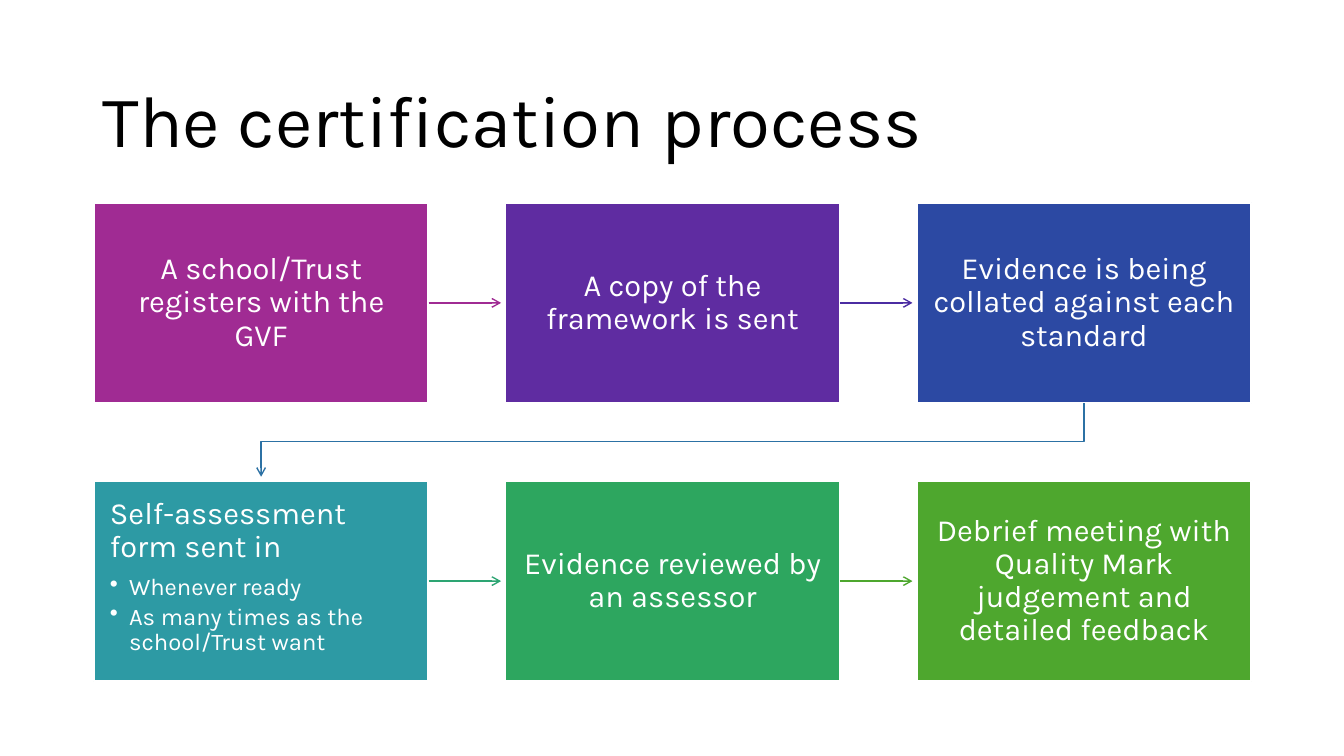
from dataclasses import dataclass

from lxml import etree
from pptx import Presentation, util as u
from pptx.dml.color import RGBColor
from pptx.enum import shapes, text
from pptx.oxml.ns import qn

PX = 9144  # EMU per px, 100 px to the inch


@dataclass(frozen=True)
class Theme:
    font: str = "Karla"
    ink: str = "000000"
    paper: str = "FFFFFF"
    boxes: tuple = ("A02B93", "5F2CA1", "2C49A3", "2D9AA4", "2DA65F", "4EA72E")
    arrows: tuple = ("A02B93", "4B2CA2", "2C71A4", "2DA573", "4EA72E")
    title_size: int = 52
    step_size: int = 22
    detail_size: int = 17
    border: float = 1.5
    arrow: int = 1


class ProcessSlide:
    def __init__(self, presentation, theme):
        self.theme = theme
        self.slide = presentation.slides.add_slide(presentation.slide_layouts[6])
        self.shapes = self.slide.shapes

    def fill_paragraph(self, paragraph, words, size, color, after=0.0):
        paragraph.text = words
        paragraph.line_spacing = 0.9
        paragraph.space_after = u.Pt(round(size * after, 1))
        paragraph.font.name = self.theme.font
        paragraph.font.size = u.Pt(size)
        paragraph.font.color.rgb = RGBColor.from_string(color)

    def title(self, words, left, top, width, height):
        box = self.shapes.add_textbox(left * PX, top * PX, width * PX, height * PX)
        frame = box.text_frame
        frame.word_wrap = True
        frame.vertical_anchor = text.MSO_ANCHOR.MIDDLE
        self.fill_paragraph(frame.paragraphs[0], words, self.theme.title_size, self.theme.ink)

    def step(self, words, details, color, left, top, width, height):
        shape = self.shapes.add_shape(shapes.MSO_SHAPE.RECTANGLE,
                                      left * PX, top * PX, width * PX, height * PX)
        shape.shadow.inherit = False
        shape.fill.solid()
        shape.fill.fore_color.rgb = RGBColor.from_string(color)
        shape.line.color.rgb = RGBColor.from_string(self.theme.paper)
        shape.line.width = u.Pt(self.theme.border)
        frame = shape.text_frame
        frame.word_wrap = True
        frame.margin_left = frame.margin_right = 16 * PX
        frame.margin_top = frame.margin_bottom = 17 * PX
        frame.vertical_anchor = text.MSO_ANCHOR.TOP if details else text.MSO_ANCHOR.MIDDLE
        heading = frame.paragraphs[0]
        heading.alignment = text.PP_ALIGN.LEFT if details else text.PP_ALIGN.CENTER
        self.fill_paragraph(heading, words, self.theme.step_size, self.theme.paper, 0.35)
        for detail in details:
            self.bullet(frame.add_paragraph(), detail)
        return shape

    def bullet(self, paragraph, words):
        self.fill_paragraph(paragraph, words, self.theme.detail_size, self.theme.paper, 0.15)
        paragraph.alignment = text.PP_ALIGN.LEFT
        paragraph.level = 1
        properties = paragraph._p.get_or_add_pPr()
        properties.set("marL", str(19 * PX))
        properties.set("indent", str(-19 * PX))
        etree.SubElement(properties, qn("a:buChar"), char="•")
        # The bullet must come before the default run properties
        properties.append(properties.find(qn("a:defRPr")))

    def arrow_line(self, shape, color):
        shape.line.color.rgb = RGBColor.from_string(color)
        shape.line.width = u.Pt(self.theme.arrow)
        line = shape.line._get_or_add_ln()
        etree.SubElement(line, qn("a:tailEnd"), type="arrow")

    def arrow(self, source, color, end_x, y):
        connector = self.shapes.add_connector(shapes.MSO_CONNECTOR.STRAIGHT,
                                              source.left + source.width, y * PX,
                                              end_x * PX, y * PX)
        connector.begin_connect(source, 3)
        connector.end_y = connector.begin_y
        self.arrow_line(connector, color)
        etree.SubElement(connector._element.spPr, qn("a:effectLst"))

    def bent_arrow(self, color, points):
        start, *rest = [(x * PX, y * PX) for x, y in points]
        builder = self.shapes.build_freeform(*start)
        builder.add_line_segments(rest, close=False)
        shape = builder.convert_to_shape()
        shape.shadow.inherit = False
        shape.fill.background()
        self.arrow_line(shape, color)


STEPS = (
    ("A school/Trust registers with the GVF", ()),
    ("A copy of the framework is sent", ()),
    ("Evidence is being collated against each standard", ()),
    ("Self-assessment form sent in",
     ("Whenever ready", "As many times as the school/Trust want")),
    ("Evidence reviewed by an assessor", ()),
    ("Debrief meeting with Quality Mark judgement and detailed feedback", ()),
)
COLUMNS = 3
LEFT, TOP, WIDTH, HEIGHT = 93, 201, 332, 199
PITCH_X, PITCH_Y = 408, 276
ARROW_GAP = 4


def main():
    presentation = Presentation()
    presentation.slide_width, presentation.slide_height = 1333 * PX, 750 * PX
    theme = Theme()
    process = ProcessSlide(presentation, theme)

    # Title
    process.title("The certification process", 92, 61, 1150, 124)

    # Steps in two rows
    boxes = []
    for index, (words, details) in enumerate(STEPS):
        row, column = divmod(index, COLUMNS)
        boxes.append(process.step(words, details, theme.boxes[index],
                                  LEFT + column * PITCH_X, TOP + row * PITCH_Y,
                                  WIDTH, HEIGHT))

    # Arrows from each step to the next
    for index, color in enumerate(theme.arrows):
        row, column = divmod(index, COLUMNS)
        if column < COLUMNS - 1:
            process.arrow(boxes[index], color,
                          LEFT + (column + 1) * PITCH_X - ARROW_GAP,
                          TOP + row * PITCH_Y + HEIGHT // 2)
        else:
            first = LEFT + WIDTH // 2
            last = first + column * PITCH_X
            bottom, next_top = TOP + HEIGHT, TOP + PITCH_Y
            bend = (bottom + next_top) // 2
            process.bent_arrow(color, ((last, bottom), (last, bend), (first, bend),
                                       (first, next_top - ARROW_GAP)))

    presentation.save("out.pptx")


if __name__ == "__main__":
    main()
